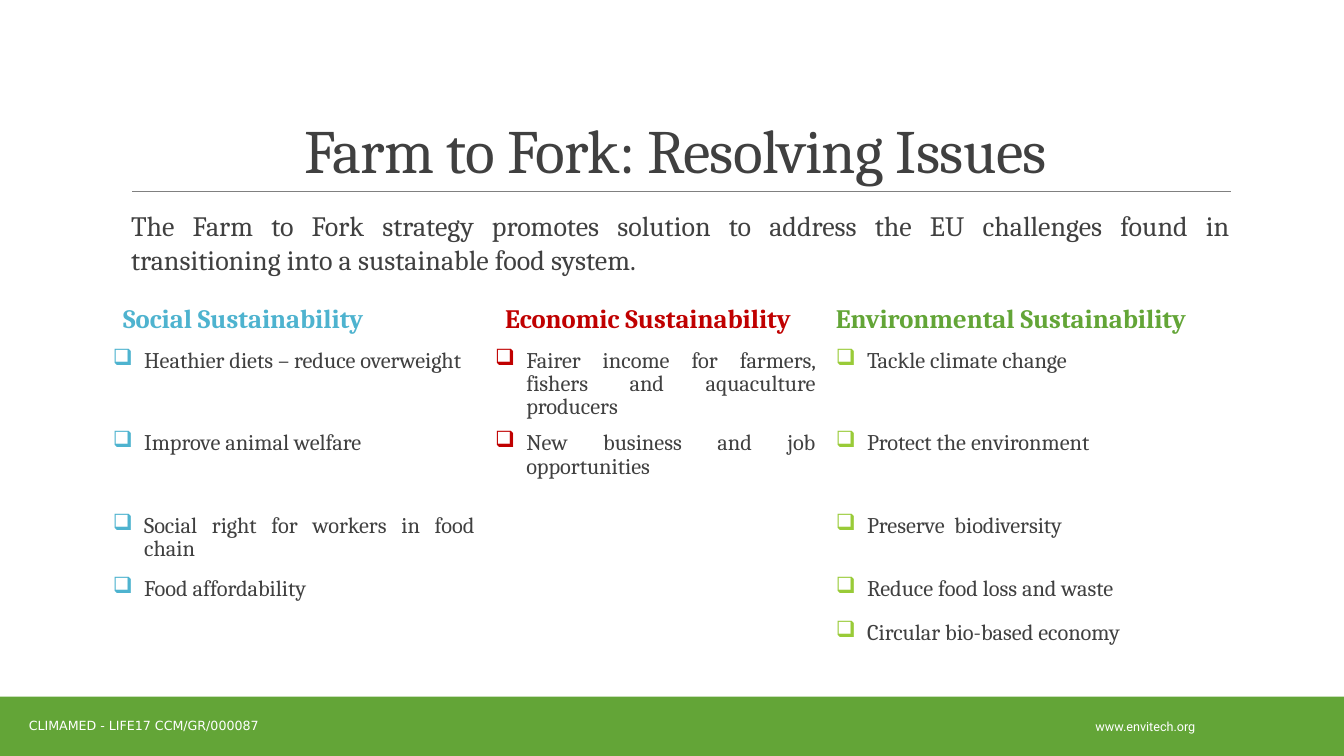
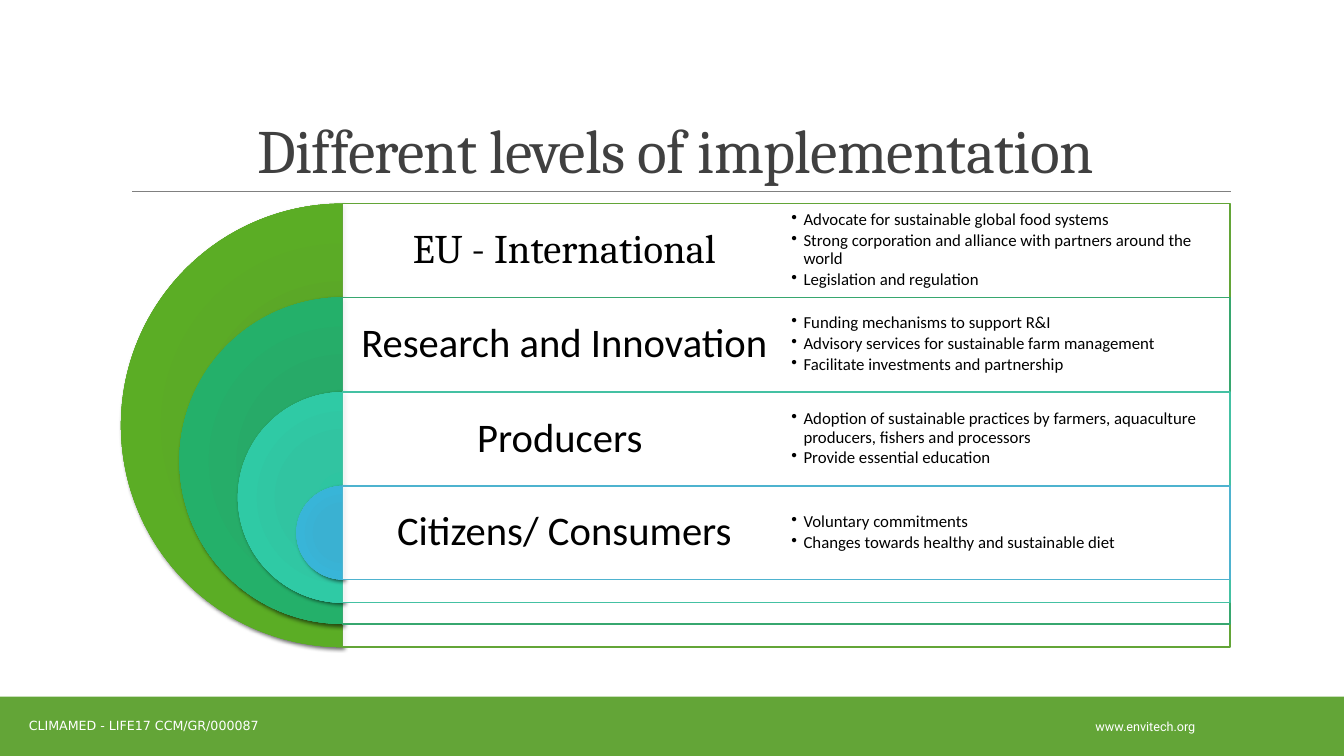
"""Build two slides on the Farm to Fork strategy and its levels of implementation."""
from dataclasses import dataclass
from typing import Optional

from lxml import etree
from pptx import Presentation
from pptx import util as u
from pptx.dml import color
from pptx.enum import shapes, text
from pptx.oxml import ns, parse_xml

EMU_PER_PX = 9144
GREEN, LIME, BLUE, RED = "63A537", "99CB38", "4EB3CF", "C00000"
INK, GREY, WHITE, BLACK = "404040", "808080", "FFFFFF", "000000"
SERIF, SANS = "Cambria", "Calibri"
LEFT, CENTER, JUSTIFY = text.PP_ALIGN.LEFT, text.PP_ALIGN.CENTER, text.PP_ALIGN.JUSTIFY
TOP, MIDDLE, BOTTOM = text.MSO_ANCHOR.TOP, text.MSO_ANCHOR.MIDDLE, text.MSO_ANCHOR.BOTTOM
GRADIENT_STOPS = (0, 34, 70, 100)


@dataclass(frozen=True)
class Box:
    left: int
    top: int
    width: int
    height: int

    def emu(self) -> tuple:
        return tuple(px(n) for n in (self.left, self.top, self.width, self.height))


@dataclass(frozen=True)
class Style:
    size: int
    font: str
    color: str
    bold: bool = False
    align: text.PP_ALIGN = LEFT
    line_spacing: Optional[float] = None
    space_after: int = 0
    margin: int = 0
    bullet: str = ""
    bullet_color: str = BLACK
    tracking: int = 0


@dataclass(frozen=True)
class Pillar:
    name: str
    color: str
    bullet_color: str
    width: int
    align: text.PP_ALIGN
    head_margin: int
    goals: tuple


@dataclass(frozen=True)
class Level:
    name: str
    font: str
    line: str
    gradient: tuple
    actions: tuple


PILLARS = (
    Pillar("Social Sustainability", BLUE, BLUE, 379, JUSTIFY, 10, (
        "Heathier diets – reduce overweight",
        "Improve animal welfare",
        "Social right for workers in food chain",
        "Food affordability")),
    Pillar("Economic Sustainability", RED, RED, 338, JUSTIFY, 10, (
        "Fairer income for farmers, fishers and aquaculture producers",
        "New business and job opportunities")),
    Pillar("Environmental Sustainability", GREEN, LIME, 420, LEFT, 0, (
        "Tackle climate change",
        "Protect the environment",
        "Preserve  biodiversity",
        "Reduce food loss and waste",
        "Circular bio-based economy")),
)
ROW_HEIGHTS = (43, 79, 82, 62, 44, 44)

LEVELS = (
    Level("EU - International", SERIF, GREEN, ("59A924", "5BA827", "5BAD25", "62AB31"), (
        "Advocate for sustainable global food systems",
        "Strong corporation and alliance with partners around the world",
        "Legislation and regulation")),
    Level("Research and Innovation", SANS, "37A76F", ("24AB67", "27AA68", "24B06A", "31AD6F"), (
        "Funding mechanisms to support R&I",
        "Advisory services for sustainable farm management",
        "Facilitate investments and partnership")),
    Level("Producers ", SANS, "44C1A3", ("2EC5A1", "31C4A1", "2FCAA5", "3EC7A6"), (
        "Adoption of sustainable practices by farmers, aquaculture producers, fishers and processors",
        "Provide essential education")),
    Level("Citizens/ Consumers", SANS, BLUE, ("37B1D3", "3AB1D2", "38B5D8", "48B7D5"), (
        "Voluntary commitments",
        "Changes towards healthy and sustainable diet")),
)


def px(n: int) -> u.Emu:
    return u.Emu(n * EMU_PER_PX)


def rgb(value: str) -> color.RGBColor:
    return color.RGBColor.from_string(value)


def sub(parent, tag: str, **attrs):
    return etree.SubElement(parent, ns.qn(tag), attrs)


def write(tf, lines: tuple, style: Style) -> None:
    tf.text = "\n".join(lines)
    for p in tf.paragraphs:
        p.alignment = style.align
        p.space_after = u.Pt(style.space_after)
        if style.line_spacing:
            p.line_spacing = style.line_spacing
        pPr = p._p.get_or_add_pPr()
        pPr.set("marL", str(px(style.margin)))
        pPr.set("indent", str(-px(style.margin) if style.bullet else 0))
        if style.bullet:
            sub(sub(pPr, "a:buClr"), "a:srgbClr", val=style.bullet_color)
            sub(pPr, "a:buChar", char=style.bullet)
        for r in p.runs:
            r.font.size = u.Pt(style.size)
            r.font.name = style.font
            r.font.bold = style.bold
            r.font.color.rgb = rgb(style.color)
            if style.tracking:
                r._r.get_or_add_rPr().set("spc", str(style.tracking))


def add_text(s, box: Box, lines: tuple, style: Style,
             anchor: text.MSO_ANCHOR = MIDDLE, insets: tuple = (10, 5)) -> None:
    tf = s.shapes.add_textbox(*box.emu()).text_frame
    tf.word_wrap = True
    tf.vertical_anchor = anchor
    tf.margin_left = tf.margin_right = px(insets[0])
    tf.margin_top = tf.margin_bottom = px(insets[1])
    write(tf, lines, style)


def add_rect(s, box: Box, fill: str, line: str = "", opacity: int = 100) -> None:
    sp = s.shapes.add_shape(shapes.MSO_SHAPE.RECTANGLE, *box.emu())
    sp.shadow.inherit = False
    sp.fill.solid()
    sp.fill.fore_color.rgb = rgb(fill)
    if opacity < 100:
        fill_color = sp._element.spPr.find(".//" + ns.qn("a:srgbClr"))
        sub(fill_color, "a:alpha", val=str(opacity * 1000))
    if line:
        sp.line.color.rgb = rgb(line)
        sp.line.width = u.Pt(1)
    else:
        sp.line.fill.background()


def add_half_disc(s, box: Box, gradient: tuple) -> None:
    sp = s.shapes.add_shape(shapes.MSO_SHAPE.PIE, *box.emu())
    sp.adjustments[0], sp.adjustments[1] = 54, 162
    sp.line.fill.background()
    sp.fill.background()
    spPr = sp._element.spPr
    fill = parse_xml(f"<a:gradFill {ns.nsdecls('a')} rotWithShape='1'/>")
    stops = sub(fill, "a:gsLst")
    for position, value in zip(GRADIENT_STOPS, gradient):
        sub(sub(stops, "a:gs", pos=str(position * 1000)), "a:srgbClr", val=value)
    centre = dict.fromkeys("ltrb", "100000")
    sub(sub(fill, "a:path", path="circle"), "a:fillToRect", **centre)
    spPr.replace(spPr.find(ns.qn("a:noFill")), fill)
    shadow = sub(sub(spPr, "a:effectLst"), "a:outerShdw", blurRad=str(u.Pt(3)),
                 dist=str(u.Pt(2)), dir="2700000", algn="ctr", rotWithShape="0")
    sub(sub(shadow, "a:srgbClr", val=BLACK), "a:alpha", val="60000")


def add_slide(prs, title: str):
    s = prs.slides.add_slide(prs.slide_layouts[6])
    rule = s.shapes.add_connector(shapes.MSO_CONNECTOR.STRAIGHT,
                                  px(131), px(190), px(1221), px(190))
    rule.line.color.rgb = rgb(GREY)
    rule.line.width = u.Pt(0.5)
    sub(rule._element.spPr, "a:effectLst")
    add_rect(s, Box(0, 691, 1333, 59), GREEN)
    add_text(s, Box(1013, 701, 246, 40), ("www.envitech.org",),
             Style(9, "Roboto", WHITE, align=CENTER))
    add_text(s, Box(0, 700, 285, 40), ("CLIMAMED - LIFE17 CCM/GR/000087",),
             Style(9, "DejaVu Sans", WHITE, align=CENTER))
    add_text(s, Box(120, 31, 1100, 159), (title,),
             Style(44, SERIF, INK, align=CENTER, line_spacing=0.85, tracking=-50), BOTTOM)
    return s


def add_pillar_table(s) -> None:
    box = Box(102, 299, sum(c.width for c in PILLARS), sum(ROW_HEIGHTS))
    table = s.shapes.add_table(len(ROW_HEIGHTS), len(PILLARS), *box.emu()).table
    table.first_row = table.horz_banding = False
    for row, height in zip(table.rows, ROW_HEIGHTS):
        row.height = px(height)
    for cell in table.iter_cells():
        cell.fill.background()
    for i, pillar in enumerate(PILLARS):
        table.columns[i].width = px(pillar.width)
        head = Style(19, SERIF, pillar.color, True, line_spacing=0.9, space_after=2,
                     margin=pillar.head_margin)
        goal = Style(16, SERIF, INK, align=pillar.align, line_spacing=0.9, space_after=2,
                     margin=31, bullet="❑", bullet_color=pillar.bullet_color)
        write(table.cell(0, i).text_frame, (pillar.name,), head)
        for j, words in enumerate(pillar.goals, start=1):
            write(table.cell(j, i).text_frame, (words,), goal)


def add_levels(s) -> None:
    left, top, outer, inner, width = 340, 202, 440, 93, 880
    gaps = len(LEVELS) - 1
    for i, level in enumerate(LEVELS):
        size = outer - round((outer - inner) * i / gaps)
        y = top + round(280 * i / gaps)
        add_half_disc(s, Box(left - size // 2, y, size, size), level.gradient)
        add_rect(s, Box(left, y, width, size), WHITE, level.line, 90)
        add_text(s, Box(left, y, width // 2, inner), (level.name,),
                 Style(29, level.font, BLACK, align=CENTER, line_spacing=0.9),
                 insets=(12, 12))
    for i, level in enumerate(LEVELS):
        y = top + round(280 * i / gaps)
        add_text(s, Box(left + width // 2, y, width // 2, inner), level.actions,
                 Style(12, SANS, BLACK, line_spacing=0.9, space_after=2,
                       margin=12, bullet="•"), insets=(5, 5))


def main() -> None:
    prs = Presentation()
    prs.slide_width, prs.slide_height = px(1333), px(750)
    s = add_slide(prs, "Farm to Fork: Resolving Issues")
    intro = ("The Farm to Fork strategy promotes solution to address the EU challenges "
             "found in transitioning into a sustainable food system.")
    add_text(s, Box(120, 202, 1100, 90), (intro,),
             Style(20, SERIF, INK, align=JUSTIFY, margin=10), TOP, (0, 5))
    add_pillar_table(s)
    add_levels(add_slide(prs, "Different levels of implementation"))
    prs.save("out.pptx")


if __name__ == "__main__":
    main()
